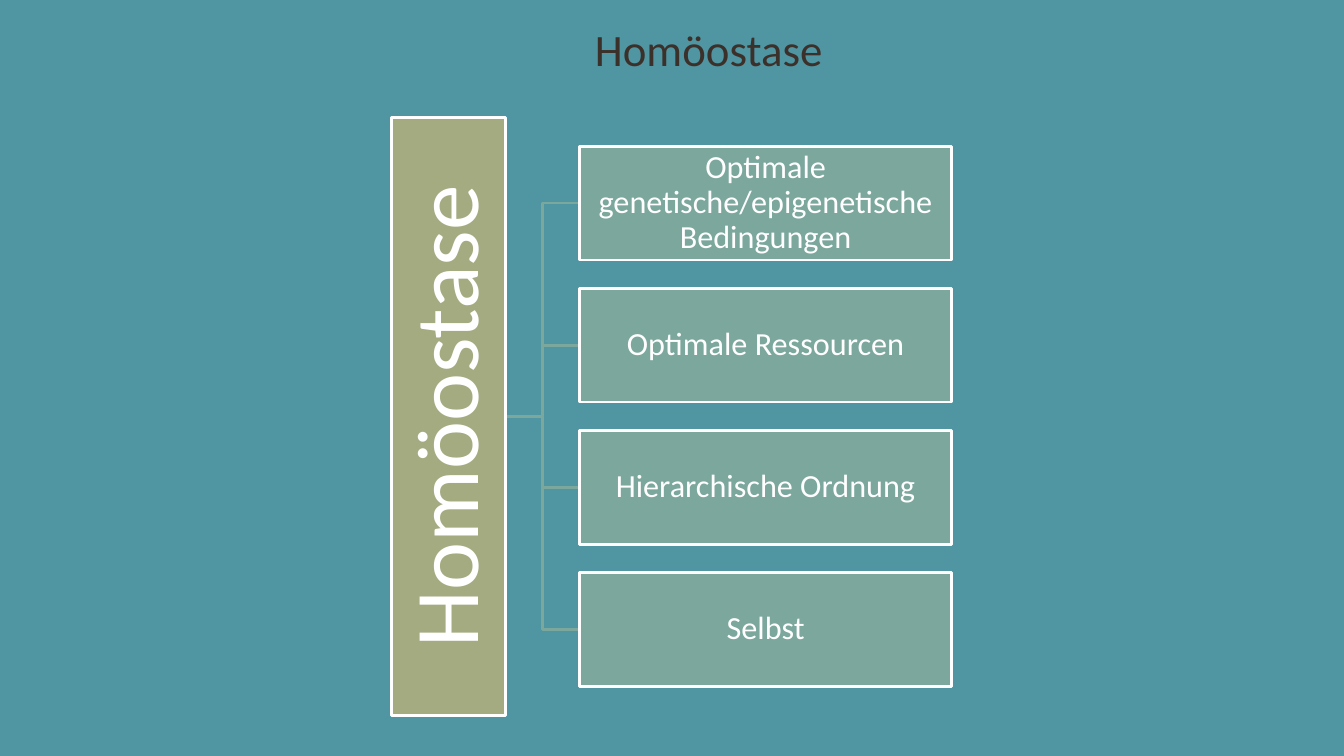
from pptx import Presentation
from pptx.dml import color
from pptx.enum import shapes, text
from pptx.util import Inches, Pt


def rgb(value):
    return color.RGBColor.from_string(value)


def write(frame, content, size, ink, font="Calibri", inset=0.02,
          anchor=text.MSO_ANCHOR.MIDDLE, line_spacing=0.9):
    frame.word_wrap = True
    frame.vertical_anchor = anchor
    frame.margin_left = frame.margin_right = Inches(inset)
    frame.margin_top = frame.margin_bottom = Inches(inset)
    paragraph = frame.paragraphs[0]
    paragraph.alignment = text.PP_ALIGN.CENTER
    paragraph.line_spacing = line_spacing
    run = paragraph.add_run()
    run.text = content
    run.font.name = font
    run.font.size = Pt(size)
    run.font.color.rgb = rgb(ink)


class HierarchySlide:
    background = "5095A2"
    title_ink = "3C302A"
    root_fill = "A5AB81"
    branch_fill = "7BA79D"
    white = "FFFFFF"
    line_width = 2

    def __init__(self, presentation):
        self.slide = presentation.slides.add_slide(presentation.slide_layouts[6])
        fill = self.slide.background.fill
        fill.solid()
        fill.fore_color.rgb = rgb(self.background)

    def outline(self, shape, ink):
        shape.shadow.inherit = False
        shape.line.color.rgb = rgb(ink)
        shape.line.width = Pt(self.line_width)

    def title(self, content, left, top, width, height):
        shape = self.slide.shapes.add_textbox(*map(Inches, (left, top, width, height)))
        write(shape.text_frame, content, 32, self.title_ink, inset=0.05,
              anchor=text.MSO_ANCHOR.TOP, line_spacing=1)

    def box(self, content, center_x, center_y, width, height, fill, size,
            inset=0.02, rotation=0):
        left, top = center_x - width / 2, center_y - height / 2
        shape = self.slide.shapes.add_shape(
            shapes.MSO_SHAPE.RECTANGLE, *map(Inches, (left, top, width, height)))
        shape.rotation = rotation
        shape.fill.solid()
        shape.fill.fore_color.rgb = rgb(fill)
        self.outline(shape, self.white)
        write(shape.text_frame, content, size, self.white, inset=inset)

    def elbow(self, start_x, start_y, end_x, end_y):
        middle_x = (start_x + end_x) / 2
        points = [(middle_x, start_y), (middle_x, end_y), (end_x, end_y)]
        builder = self.slide.shapes.build_freeform(Inches(start_x), Inches(start_y))
        builder.add_line_segments(
            [(Inches(x), Inches(y)) for x, y in points], close=False)
        shape = builder.convert_to_shape()
        shape.fill.background()
        self.outline(shape, self.branch_fill)


def main():
    presentation = Presentation()
    presentation.slide_width = Inches(13.33)
    presentation.slide_height = Inches(7.5)
    page = HierarchySlide(presentation)

    root_x, middle_y = 4.45, 4.13
    root_length, box_height = 5.93, 1.13
    branch_left, branch_width, branch_pitch = 5.75, 3.69, 1.41
    root_right = root_x + box_height / 2
    branches = ["Optimale genetische/epigenetische Bedingungen",
                "Optimale Ressourcen", "Hierarchische Ordnung", "Selbst"]
    centers = [middle_y + (index - (len(branches) - 1) / 2) * branch_pitch
               for index in range(len(branches))]

    page.title("Homöostase", 3.53, 0.17, 7, 0.62)
    for center_y in reversed(centers):
        page.elbow(root_right, middle_y, branch_left, center_y)
    page.box("Homöostase", root_x, middle_y, root_length, box_height,
             page.root_fill, 65, inset=0.05, rotation=270)
    for branch, center_y in zip(branches, centers):
        page.box(branch, branch_left + branch_width / 2, center_y,
                 branch_width, box_height, page.branch_fill, 23)

    presentation.save("out.pptx")


if __name__ == "__main__":
    main()
